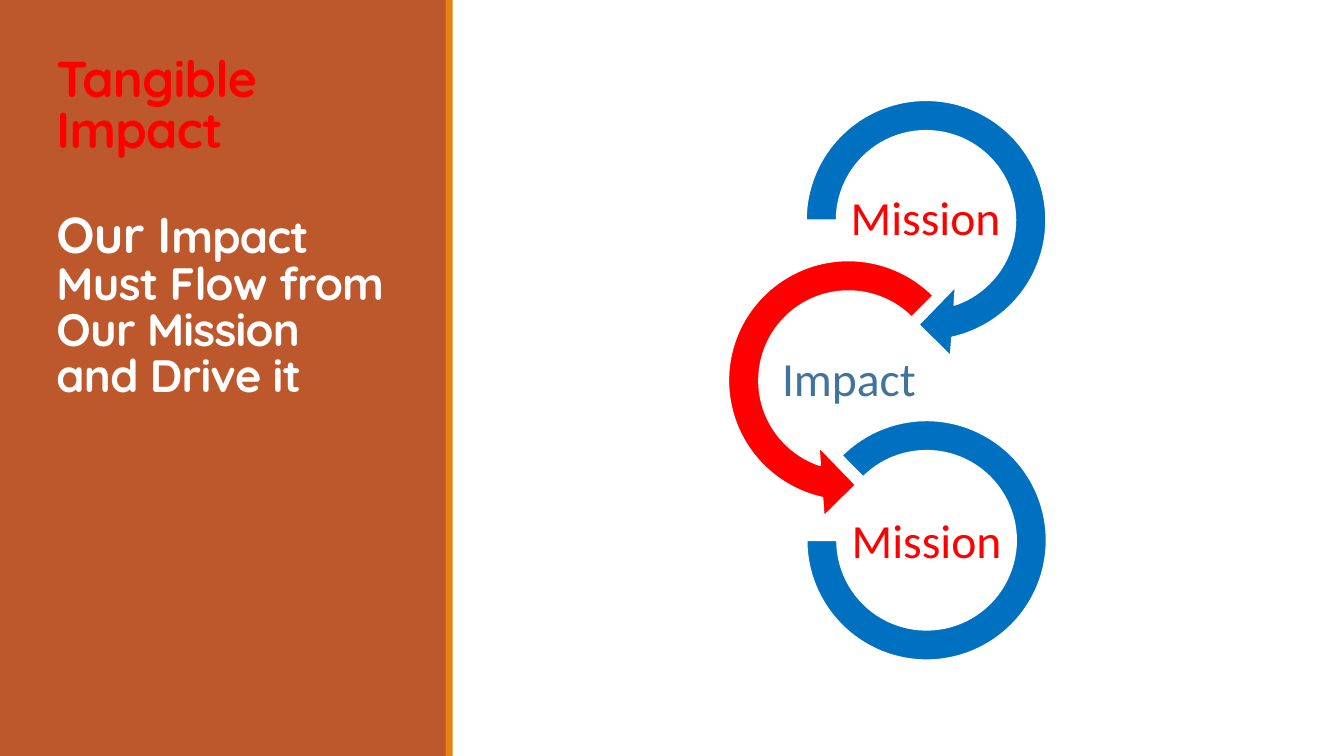
import pptx
import pptx.util
import pptx.dml.color
import pptx.enum.shapes
import pptx.enum.text

Inches = pptx.util.Inches
Pt = pptx.util.Pt
SHAPE = pptx.enum.shapes.MSO_SHAPE
ANCHOR = pptx.enum.text.MSO_ANCHOR
ALIGN = pptx.enum.text.PP_ALIGN

COLORS = {
    "panel": "BD582C",
    "stripe": "E48312",
    "red": "FF0000",
    "blue": "0070C0",
    "steel": "40749B",
    "white": "FFFFFF",
}


def rgb(name):
    return pptx.dml.color.RGBColor.from_string(COLORS[name])


def add_filled(shapes, preset, box, color):
    filled = shapes.add_shape(preset, *[Inches(v) for v in box])
    filled.shadow.inherit = False
    filled.fill.solid()
    filled.fill.fore_color.rgb = rgb(color)
    filled.line.fill.background()
    return filled


deck = pptx.Presentation()
deck.slide_width = Inches(13.33)
deck.slide_height = Inches(7.5)
slide = deck.slides.add_slide(deck.slide_layouts[5])

add_filled(slide.shapes, SHAPE.RECTANGLE, (0, 0, 4.43, 7.5), "panel")
add_filled(slide.shapes, SHAPE.RECTANGLE, (4.42, 0, 0.07, 7.5), "stripe")

heading = slide.shapes.title
heading.element.getparent().append(heading.element)
heading_place = {"left": 0.46, "top": 1.18, "width": 3.5, "height": 2.86}
for side, length in heading_place.items():
    setattr(heading, side, Inches(length))
heading_frame = heading.text_frame
heading_format = {
    "word_wrap": True,
    "auto_size": pptx.enum.text.MSO_AUTO_SIZE.NONE,
    "vertical_anchor": ANCHOR.BOTTOM,
}
for name, value in heading_format.items():
    setattr(heading_frame, name, value)

heading_lines = [
    (0, [("Tangible Impact", 36, "red")]),
    (38, [
        ("Our I", 36, "white"),
        ("mpact ", 32.4, "white"),
        ("\v", 32.4, "white"),
        ("Must Flow from Our Mission and Drive it", 32.4, "white"),
    ]),
]
for index, (space_before, pieces) in enumerate(heading_lines):
    line = heading_frame.add_paragraph() if index else heading_frame.paragraphs[0]
    line_format = {
        "alignment": ALIGN.LEFT,
        "line_spacing": 0.85,
        "space_before": Pt(space_before),
    }
    for name, value in line_format.items():
        setattr(line, name, value)
    for words, size, color in pieces:
        if words == "\v":
            line.add_line_break()
            continue
        run = line.add_run()
        run.text = words
        run_format = {"name": "Quicksand", "size": Pt(size), "bold": True}
        for name, value in run_format.items():
            setattr(run.font, name, value)
        run.font.color.rgb = rgb(color)
        run.font._element.set("spc", "-50")

flow = slide.shapes.add_group_shape()
steps = [
    (SHAPE.CIRCULAR_ARROW, (7.8, 0.8, 2.77, 2.77),
     (0.11, 11.423, 45, 108, 0.125), "blue", "Mission", (8.41, 1.8), "red"),
    (SHAPE.LEFT_CIRCULAR_ARROW, (7.03, 2.39, 2.77, 2.77),
     (0.11, 11.423, 63, 189, 0.125), "red", "Impact", (7.65, 3.4), "steel"),
    (SHAPE.BLOCK_ARC, (8, 4.17, 2.38, 2.38),
     (135, 108, 0.127), "blue", "Mission", (8.42, 5), "red"),
]
for preset, box, adjustments, fill, caption, corner, caption_color in steps:
    ring = add_filled(flow.shapes, preset, box, fill)
    ring.line.color.rgb = rgb("white")
    ring.line.width = Pt(1.25)
    for index, value in enumerate(adjustments):
        ring.adjustments[index] = value

    label = flow.shapes.add_textbox(
        *[Inches(v) for v in corner], Inches(1.54), Inches(0.77))
    label_format = {
        "word_wrap": True,
        "vertical_anchor": ANCHOR.MIDDLE,
        "margin_left": Inches(0.02),
        "margin_right": Inches(0.02),
        "margin_top": Inches(0.02),
        "margin_bottom": Inches(0.02),
    }
    for name, value in label_format.items():
        setattr(label.text_frame, name, value)
    line = label.text_frame.paragraphs[0]
    line.alignment = ALIGN.CENTER
    line.line_spacing = 0.9
    run = line.add_run()
    run.text = caption
    run.font.name = "Calibri"
    run.font.size = Pt(34)
    run.font.color.rgb = rgb(caption_color)

deck.save("out.pptx")
